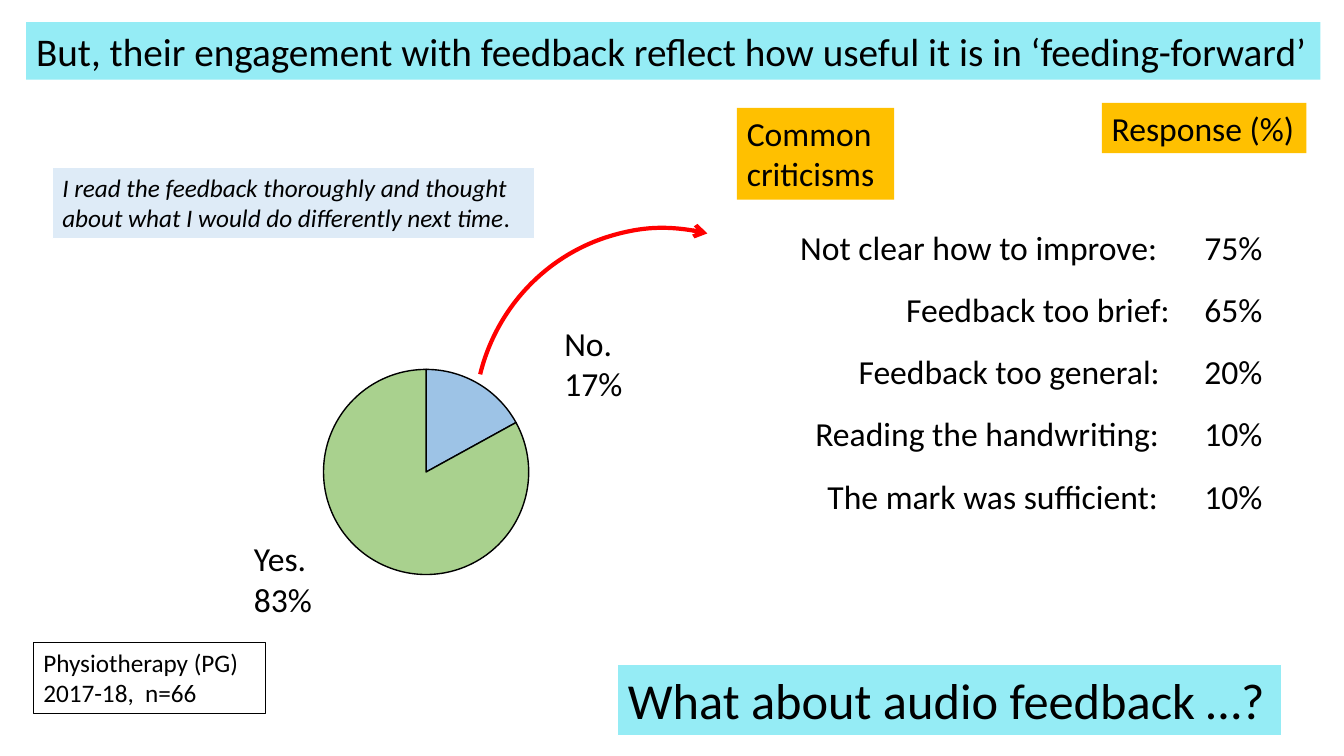
"""Build the slide on how students engage with feedback."""
from dataclasses import dataclass
from typing import Any, Optional

from lxml import etree
from pptx import Presentation
from pptx import util as u
from pptx.chart.data import CategoryChartData
from pptx.dml.color import RGBColor
from pptx.enum import chart as charts, shapes, text
from pptx.oxml.ns import qn

BLACK = RGBColor(0x00, 0x00, 0x00)
WHITE = RGBColor(0xFF, 0xFF, 0xFF)
AMBER = RGBColor(0xFF, 0xC0, 0x00)
CYAN = RGBColor(0x95, 0xEC, 0xF5)
PALE_BLUE = RGBColor(0xDE, 0xEB, 0xF7)
BLUE = RGBColor(0x9D, 0xC3, 0xE6)
GREEN = RGBColor(0xA9, 0xD1, 0x8E)
RED = RGBColor(0xFF, 0x00, 0x00)

FONT = "Calibri"
SLIDE_WIDTH, SLIDE_HEIGHT = u.Inches(13.33), u.Inches(7.5)
COLUMN, ROW = SLIDE_WIDTH / 100, SLIDE_HEIGHT / 100
INSET = u.Inches(0.1)

PERCENT_COLUMN, CRITICISM_RIGHT = 89.63, 95.25
CRITICISM_TOP, CRITICISM_PITCH, CRITICISM_HEIGHT = 29.33, 8.23, 6.67


@dataclass(frozen=True)
class Area:
    """Place on a grid of 100 columns by 100 rows."""
    left: float
    top: float
    width: float
    height: float

    def lengths(self) -> tuple[int, int, int, int]:
        """Return the left, top, width and height in EMU."""
        return (round(self.left * COLUMN), round(self.top * ROW),
                round(self.width * COLUMN), round(self.height * ROW))


@dataclass(frozen=True)
class Label:
    """Box of text with its format."""
    words: str
    area: Area
    size: int = 24
    fill: Optional[RGBColor] = None
    line: Optional[RGBColor] = None
    wrap: bool = True
    italic: bool = False
    ending: str = ""


@dataclass(frozen=True)
class Criticism:
    """Common criticism, its share of responses and its first column."""
    words: str
    percent: int
    left: float


LABELS = [
    Label("Physiotherapy (PG)\n2017-18,  n=66", Area(2.48, 84.93, 17.25, 9.47),
          size=18, line=BLACK, wrap=False),
    Label("Response (%)", Area(81.98, 13.6, 15.23, 6.67), fill=AMBER, wrap=False),
    Label("No.\n17%", Area(41.25, 42, 9.45, 12.13), fill=WHITE, line=WHITE),
    Label("Yes.\n83%", Area(18.15, 70.53, 6.53, 12.13), fill=WHITE, line=WHITE),
    Label("But, their engagement with feedback reflect how useful it is in ‘feeding-forward’",
          Area(1.95, 2.93, 96.3, 7.6), size=28, fill=CYAN, wrap=False),
    Label("I read the feedback thoroughly and thought about what I would do differently next time",
          Area(3.9, 22.13, 35.85, 9.47), size=18, fill=PALE_BLUE, line=WHITE,
          italic=True, ending="."),
    Label("What about audio feedback …?", Area(45.98, 87.87, 49.35, 9.47),
          size=36, fill=CYAN, line=WHITE, wrap=False),
    Label("Common criticisms", Area(54.83, 14.27, 11.7, 12.13), fill=AMBER),
]

CRITICISMS = [
    Criticism("Not clear how to improve:", 75, 58.8),
    Criticism("Feedback too brief:", 65, 66.68),
    Criticism("Feedback too general:", 20, 63.15),
    Criticism("Reading the handwriting:", 10, 59.93),
    Criticism("The mark was sufficient:", 10, 60.83),
]

ENGAGEMENT = {"1": (17, BLUE), "2": (83, GREEN)}
PIE_AREA = Area(20.63, 46.53, 24.75, 32.27)
PIE_LAYOUT = {"layoutTarget": "inner", "xMode": "edge", "yMode": "edge",
              "x": 0.139, "y": 0.072, "w": 0.617, "h": 0.842}
ARROW_AREA = Area(35.03, 30.67, 28.43, 49.47)


def apply(target: Any, values: dict[str, Any]) -> None:
    """Set each named attribute of the target."""
    for name, value in values.items():
        setattr(target, name, value)


def add_label(slide: Any, label: Label) -> Any:
    """Add a box of text and return its text frame."""
    box = slide.shapes.add_textbox(*label.area.lengths())
    if label.fill is not None:
        box.fill.solid()
        box.fill.fore_color.rgb = label.fill
    if label.line is not None:
        box.line.color.rgb = label.line
        box.line.width = u.Pt(0.75)
    frame = box.text_frame
    apply(frame, {"text": label.words, "word_wrap": label.wrap,
                  "auto_size": text.MSO_AUTO_SIZE.SHAPE_TO_FIT_TEXT})
    style = {"name": FONT, "size": u.Pt(label.size), "italic": label.italic}
    for paragraph in frame.paragraphs:
        for run in paragraph.runs:
            apply(run.font, style)
            run.font.color.rgb = BLACK
    if label.ending:
        ending = frame.paragraphs[-1].add_run()
        ending.text = label.ending
        apply(ending.font, style | {"italic": False})
        ending.font.color.rgb = BLACK
    return frame


def add_criticism(slide: Any, index: int, criticism: Criticism) -> None:
    """Add a criticism whose percentage stands at the shared column."""
    area = Area(criticism.left, CRITICISM_TOP + index * CRITICISM_PITCH,
                CRITICISM_RIGHT - criticism.left, CRITICISM_HEIGHT)
    frame = add_label(slide, Label(f"{criticism.words}\t{criticism.percent}%", area, fill=WHITE))
    properties = frame.paragraphs[0]._p.get_or_add_pPr()
    stops = etree.SubElement(properties, qn("a:tabLst"))
    position = round((PERCENT_COLUMN - criticism.left) * COLUMN) - INSET
    etree.SubElement(stops, qn("a:tab"), pos=str(position), algn="l")


def add_engagement_pie(slide: Any) -> None:
    """Add the pie of students who did and did not use the feedback."""
    data = CategoryChartData()
    data.categories = list(ENGAGEMENT)
    data.add_series("Series 1", [value for value, _ in ENGAGEMENT.values()])
    pie = slide.shapes.add_chart(charts.XL_CHART_TYPE.PIE, *PIE_AREA.lengths(), data).chart
    apply(pie, {"has_legend": False, "has_title": False})
    apply(pie.font, {"name": FONT, "size": u.Pt(10)})
    pie.font.color.rgb = BLACK
    plot = pie.plots[0]
    plot.vary_by_categories = True
    for index, (_, color) in enumerate(ENGAGEMENT.values()):
        slice_format = plot.series[0].points[index].format
        slice_format.fill.solid()
        slice_format.fill.fore_color.rgb = color
        slice_format.line.color.rgb = BLACK
        slice_format.line.width = u.Pt(1)
    plot_area = pie._chartSpace.chart.plotArea
    for layout in plot_area.findall(qn("c:layout")):
        plot_area.remove(layout)
    layout = etree.Element(qn("c:layout"))
    plot_area.insert(0, layout)
    manual = etree.SubElement(layout, qn("c:manualLayout"))
    for name, value in PIE_LAYOUT.items():
        etree.SubElement(manual, qn(f"c:{name}"), val=str(value))


def add_arrow(slide: Any) -> None:
    """Add the curved arrow from the 'No' slice to the criticisms."""
    arrow = slide.shapes.add_shape(shapes.MSO_SHAPE.ARC, *ARROW_AREA.lengths())
    arrow.rotation = 283.8
    arrow.shadow.inherit = False
    arrow.fill.background()
    arrow.line.color.rgb = RED
    arrow.line.width = u.Pt(3)
    etree.SubElement(arrow.line._get_or_add_ln(), qn("a:tailEnd"), type="arrow")


def main() -> None:
    """Build and save the slide."""
    deck = Presentation()
    apply(deck, {"slide_width": SLIDE_WIDTH, "slide_height": SLIDE_HEIGHT})
    slide = deck.slides.add_slide(deck.slide_layouts[6])
    add_engagement_pie(slide)
    for index, criticism in enumerate(CRITICISMS):
        add_criticism(slide, index, criticism)
    for label in LABELS:
        add_label(slide, label)
    add_arrow(slide)
    deck.save("out.pptx")


if __name__ == "__main__":
    main()
